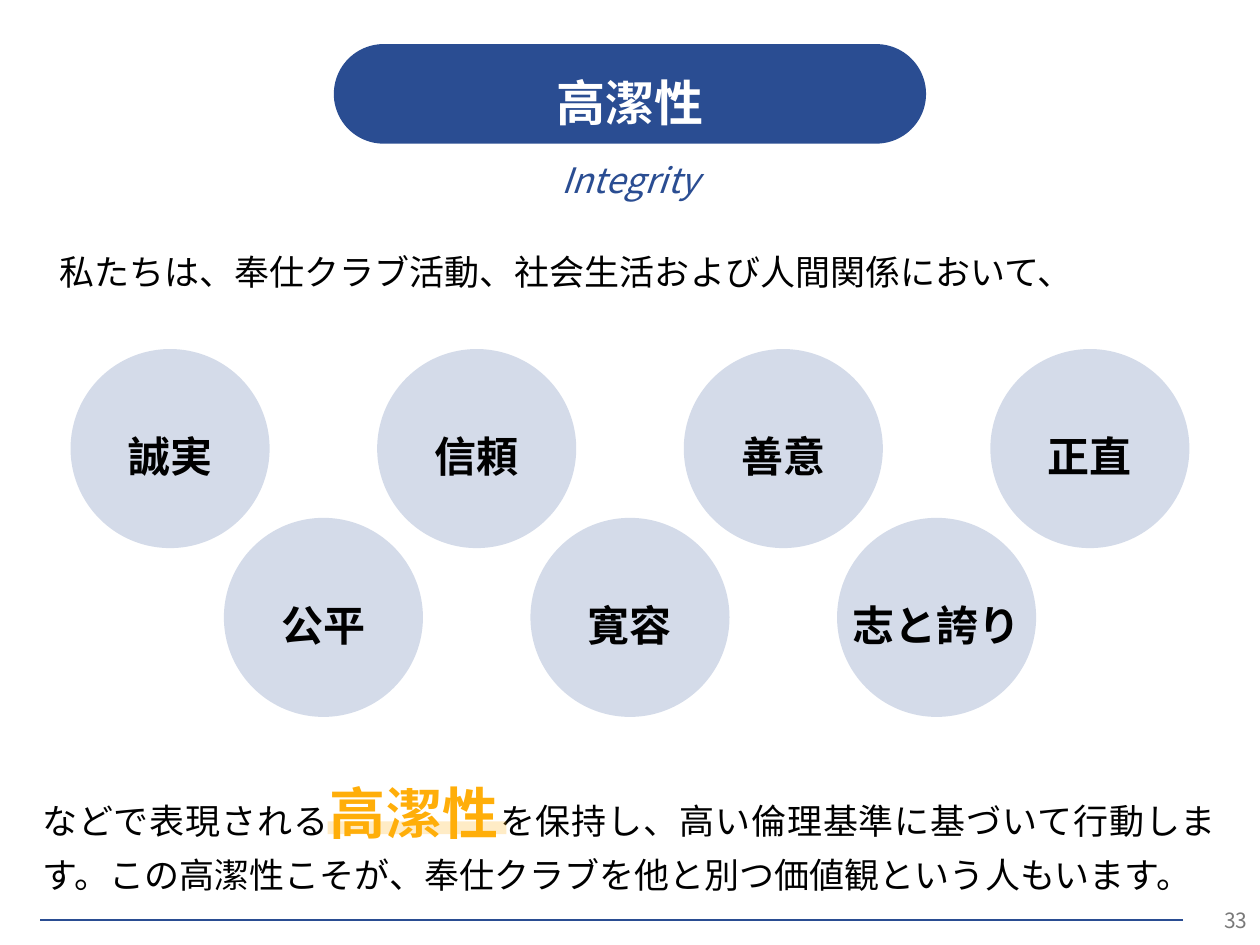
from dataclasses import dataclass
from typing import Optional

from lxml.etree import SubElement
from pptx import Presentation
from pptx.dml.color import RGBColor
from pptx.enum.shapes import MSO_CONNECTOR, MSO_SHAPE
from pptx.enum.text import MSO_ANCHOR, MSO_AUTO_SIZE, PP_ALIGN
from pptx.oxml.ns import qn
from pptx.util import Inches, Pt


@dataclass(frozen=True)
class Theme:
    font: str = "Noto Sans CJK JP"
    blue: str = "2A4D92"
    orange: str = "FFAE09"
    black: str = "000000"
    white: str = "FFFFFF"
    gray: str = "797979"
    title: int = 28
    body: int = 20
    emphasis: int = 32
    value: int = 24
    number: int = 12


THEME = Theme()


@dataclass(frozen=True)
class Box:
    left: float
    top: float
    width: float
    height: float

    def lengths(self) -> tuple:
        return tuple(map(Inches, (self.left, self.top, self.width, self.height)))


@dataclass(frozen=True)
class ValueRow:
    left: float
    top: float
    labels: tuple


CIRCLE_SIZE = 1.58
CIRCLE_LEFT = 0.56
CIRCLE_PITCH = 7.3 / 3
VALUE_ROWS = (
    ValueRow(CIRCLE_LEFT, 2.77, ("誠実", "信頼", "善意", "正直")),
    ValueRow(CIRCLE_LEFT + CIRCLE_PITCH / 2, 4.11, ("公平", "寛容", "志と誇り")),
)


def add_text(paragraph, text: str, *, size: int, color: str,
             bold: bool = False, italic: bool = False) -> None:
    run = paragraph.add_run()
    run.text = text
    font = run.font
    font.name = THEME.font
    font.size = Pt(size)
    font.bold = bold
    font.italic = italic
    font.color.rgb = RGBColor.from_string(color)
    SubElement(run._r.get_or_add_rPr(), qn("a:ea"), typeface=THEME.font)


def add_filled_shape(slide, kind: MSO_SHAPE, box: Box, color: str,
                     opacity: Optional[int] = None):
    shape = slide.shapes.add_shape(kind, *box.lengths())
    shape.shadow.inherit = False
    shape.fill.solid()
    shape.fill.fore_color.rgb = RGBColor.from_string(color)
    shape.line.fill.background()
    if opacity is not None:
        color_element = shape._element.spPr.find(qn("a:solidFill"))[0]
        SubElement(color_element, qn("a:alpha"), val=str(opacity * 1000))
    return shape


def add_label(shape, text: str, size: int, color: str, wrap: bool = True) -> None:
    frame = shape.text_frame
    frame.word_wrap = wrap
    frame.vertical_anchor = MSO_ANCHOR.MIDDLE
    frame.margin_top = Inches(0.08)
    paragraph = frame.paragraphs[0]
    paragraph.alignment = PP_ALIGN.CENTER
    paragraph.line_spacing = 1.2
    add_text(paragraph, text, size=size, color=color, bold=True)


def add_text_box(slide, box: Box, alignment: PP_ALIGN, wrap: bool = True):
    frame = slide.shapes.add_textbox(*box.lengths()).text_frame
    frame.word_wrap = wrap
    frame.auto_size = MSO_AUTO_SIZE.SHAPE_TO_FIT_TEXT
    paragraph = frame.paragraphs[0]
    paragraph.alignment = alignment
    paragraph.line_spacing = 1.2
    paragraph.space_after = Pt(12)
    return paragraph


def add_footer(slide) -> None:
    number = add_filled_shape(slide, MSO_SHAPE.RECTANGLE,
                              Box(9.39, 7.1, 0.61, 0.4), THEME.white)
    number.text_frame.vertical_anchor = MSO_ANCHOR.MIDDLE
    paragraph = number.text_frame.paragraphs[0]
    paragraph.alignment = PP_ALIGN.RIGHT
    add_text(paragraph, "33", size=THEME.number, color=THEME.gray)

    rule = slide.shapes.add_connector(
        MSO_CONNECTOR.STRAIGHT, Inches(9.39), Inches(7.3), Inches(0.32), Inches(7.3))
    rule.begin_connect(number, 1)
    rule.line.color.rgb = RGBColor.from_string(THEME.blue)
    rule.line.width = Pt(1)
    SubElement(rule._element.spPr, qn("a:effectLst"))


def add_value_rows(slide) -> None:
    for row in VALUE_ROWS:
        for column, label in enumerate(row.labels):
            box = Box(row.left + column * CIRCLE_PITCH, row.top, CIRCLE_SIZE, CIRCLE_SIZE)
            circle = add_filled_shape(slide, MSO_SHAPE.OVAL, box, THEME.blue, opacity=20)
            add_label(circle, label, THEME.value, THEME.black, wrap=False)


def main() -> None:
    presentation = Presentation()
    presentation.slide_width = Inches(10)
    presentation.slide_height = Inches(7.5)
    slide = presentation.slides.add_slide(presentation.slide_layouts[6])

    add_footer(slide)

    # Subtitle and introduction
    subtitle = add_text_box(slide, Box(4.31, 1.14, 1.38, 0.49), PP_ALIGN.CENTER, wrap=False)
    add_text(subtitle, "Integrity", size=THEME.body, color=THEME.blue, italic=True)
    introduction = add_text_box(slide, Box(0.37, 1.87, 9.25, 0.49), PP_ALIGN.JUSTIFY)
    add_text(introduction, "私たちは、奉仕クラブ活動、社会生活および人間関係において、",
             size=THEME.body, color=THEME.black)

    # Title pill
    title = add_filled_shape(slide, MSO_SHAPE.ROUNDED_RECTANGLE,
                             Box(2.65, 0.35, 4.7, 0.79), THEME.blue)
    title.adjustments[0] = 0.5
    add_label(title, "高潔性", THEME.title, THEME.white)

    # Conclusion
    conclusion = add_text_box(slide, Box(0.24, 6.02, 9.51, 1.13), PP_ALIGN.JUSTIFY)
    add_text(conclusion, "などで表現される", size=THEME.body, color=THEME.black)
    add_text(conclusion, "高潔性", size=THEME.emphasis, color=THEME.orange, bold=True)
    add_text(conclusion,
             "を保持し、高い倫理基準に基づいて行動します。"
             "この高潔性こそが、奉仕クラブを他と別つ価値観という人もいます。",
             size=THEME.body, color=THEME.black)

    add_value_rows(slide)

    # Marker under the emphasised word
    add_filled_shape(slide, MSO_SHAPE.RECTANGLE, Box(2.6, 6.52, 1.42, 0.1),
                     THEME.orange, opacity=23)

    presentation.save("out.pptx")


if __name__ == "__main__":
    main()
